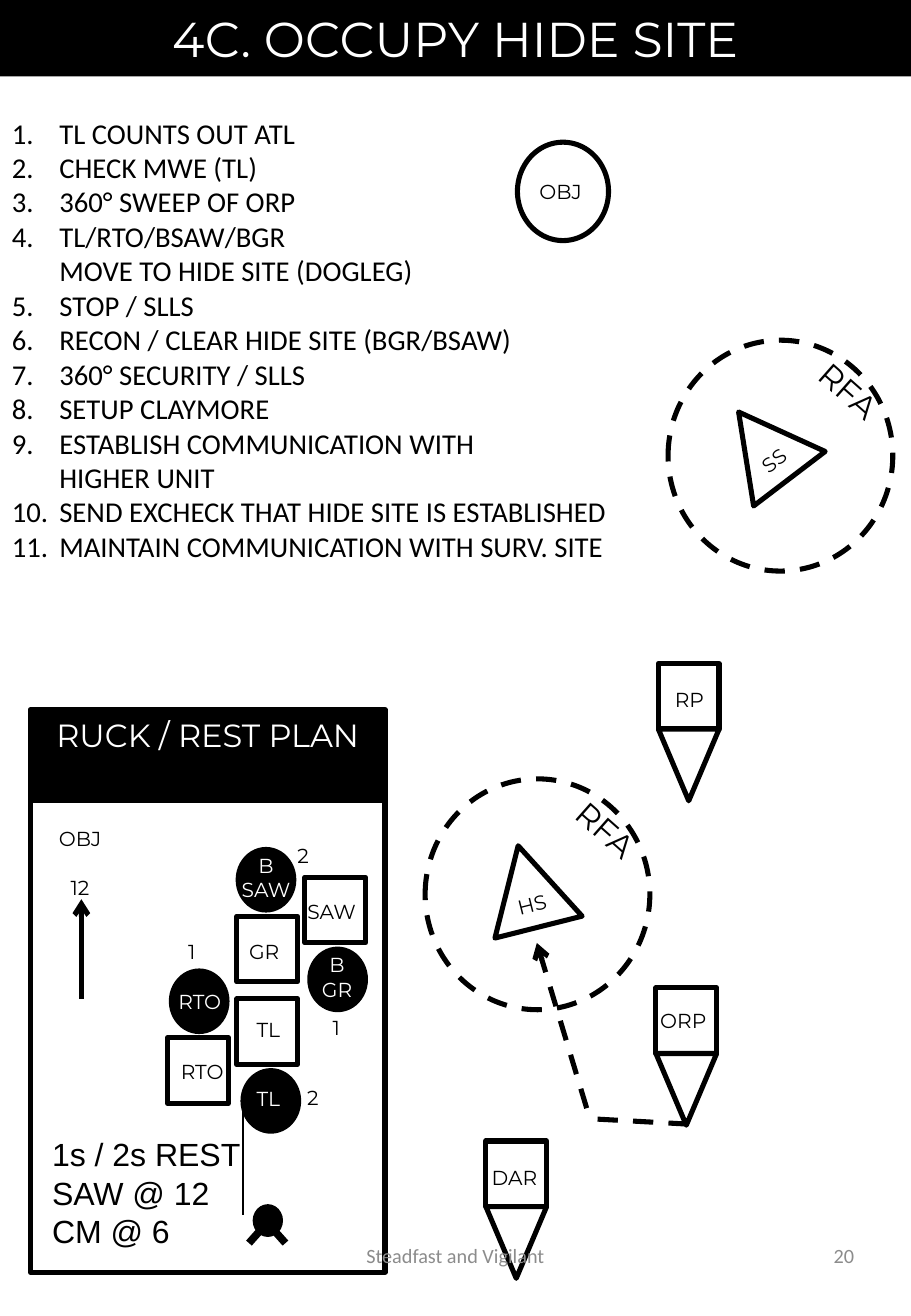
from dataclasses import dataclass

import pptx
import pptx.dml.color
import pptx.enum.dml
import pptx.enum.shapes
import pptx.enum.text
import pptx.oxml.ns
import pptx.util
from lxml import etree

Inches, Pt = pptx.util.Inches, pptx.util.Pt
Shape = pptx.enum.shapes.MSO_SHAPE
Align = pptx.enum.text.PP_ALIGN
Anchor = pptx.enum.text.MSO_ANCHOR
BLACK, WHITE, GREY = "000000", "FFFFFF", "8C8C8C"
MARK_W, MARK_H, TIP_H = 0.5, 0.54, 0.59


@dataclass
class Label:
    text: str
    x: float
    y: float
    w: float
    h: float = 0.3
    rot: float = 0


@dataclass
class Mark:
    """A ruck (square), rest position (disc) or rally point with its label."""
    x: float
    y: float
    label: Label


@dataclass
class Site:
    """A dashed fire area around a triangular site."""
    x: float
    y: float
    tri_x: float
    tri_y: float
    label: Label


RUCKS = [
    Mark(1.95, 7.54, Label("GR", 1.94, 7.68, 0.47)),
    Mark(2.51, 7.22, Label("SAW", 2.42, 7.35, 0.62)),
    Mark(1.38, 8.54, Label("RTO", 1.37, 8.67, 0.59)),
    Mark(1.95, 8.22, Label("TL", 1.99, 8.32, 0.44)),
]
RESTS = [
    Mark(1.94, 6.97, Label("B\nSAW", 1.88, 6.97, 0.62, 0.5)),
    Mark(2.53, 7.79, Label("B\nGR", 2.54, 7.79, 0.47, 0.5)),
    Mark(1.39, 7.97, Label("RTO", 1.35, 8.09, 0.59)),
    Mark(1.98, 8.79, Label("TL", 1.99, 8.89, 0.44)),
]
RALLY_POINTS = [
    Mark(5.42, 5.46, Label("RP", 5.45, 5.61, 0.45)),
    Mark(5.4, 8.13, Label("ORP", 5.33, 8.25, 0.59)),
    Mark(4, 9.39, Label("DAR", 3.94, 9.54, 0.59)),
]
SITES = [
    Site(5.5, 2.8, 5.92, 3.32, Label("SS", 6.15, 3.64, 0.44, rot=322.7)),
    Site(3.5, 6.41, 3.98, 6.95, Label("HS", 4.15, 7.29, 0.46, rot=345.9)),
]
SHIFTS = [("2", 2.35, 6.89), ("1", 1.45, 7.68), ("1", 2.64, 8.31), ("2", 2.43, 8.88)]
STEPS = [
    "TL COUNTS OUT ATL", "CHECK MWE (TL)", "360° SWEEP OF ORP",
    "TL/RTO/BSAW/BGR\vMOVE TO HIDE SITE (DOGLEG)", "STOP / SLLS",
    "RECON / CLEAR HIDE SITE (BGR/BSAW)", "360° SECURITY / SLLS",
    "SETUP CLAYMORE", "ESTABLISH COMMUNICATION WITH\vHIGHER UNIT",
    "SEND EXCHECK THAT HIDE SITE IS ESTABLISHED",
    "MAINTAIN COMMUNICATION WITH SURV. SITE",
]
WIRE_START = (2.22, 9.32)
WIRE_CURVES = [
    ((2.23, 9.36), (2.25, 9.4), (2.24, 9.45)),
    ((2.24, 9.5), (2.19, 9.56), (2.18, 9.62)),
    ((2.18, 9.68), (2.2, 9.77), (2.21, 9.83)),
    ((2.21, 9.88), (2.2, 9.93), (2.2, 9.93)),
]

prs = pptx.Presentation()
prs.slide_width, prs.slide_height = Inches(7.5), Inches(10.83)
s = prs.slides.add_slide(prs.slide_layouts[6])


def rgb(color: str) -> pptx.dml.color.RGBColor:
    return pptx.dml.color.RGBColor.from_string(color)


def set_line(line, width: float, dash: bool = False) -> None:
    line.color.rgb = rgb(BLACK)
    line.width = Pt(width)
    if dash:
        line.dash_style = pptx.enum.dml.MSO_LINE.DASH


def add_mark(kind, x: float, y: float, w: float, h: float, fill: str = "",
             line: float = 0, dash: bool = False, rot: float = 0):
    sp = s.shapes.add_shape(kind, Inches(x), Inches(y), Inches(w), Inches(h))
    sp.shadow.inherit = False
    sp.rotation = rot
    if fill:
        sp.fill.solid()
        sp.fill.fore_color.rgb = rgb(fill)
    else:
        sp.fill.background()
    if line:
        set_line(sp.line, line, dash)
    else:
        sp.line.fill.background()
    return sp


def write(sp, text: str, size: float, color: str = BLACK, font: str = "Montserrat",
          align=Align.CENTER, anchor=Anchor.TOP, wrap: bool = True):
    tf = sp.text_frame
    tf.word_wrap, tf.vertical_anchor = wrap, anchor
    if anchor == Anchor.TOP:
        tf.auto_size = pptx.enum.text.MSO_AUTO_SIZE.SHAPE_TO_FIT_TEXT
    for i, paragraph in enumerate(text.split("\n")):
        p = tf.add_paragraph() if i else tf.paragraphs[0]
        p.alignment = align
        for j, piece in enumerate(paragraph.split("\v")):
            if j:
                p.add_line_break()
            r = p.add_run()
            r.text = piece
            r.font.size, r.font.name = Pt(size), font
            r.font.color.rgb = rgb(color)
    return tf


def add_text(label: Label, size: float = 12, color: str = BLACK, **style):
    sp = s.shapes.add_textbox(Inches(label.x), Inches(label.y), Inches(label.w), Inches(label.h))
    sp.rotation = label.rot
    return write(sp, label.text, size, color, **style)


def add_line(x1: float, y1: float, x2: float, y2: float, width: float = 3,
             dash: bool = False, arrow: bool = False) -> None:
    sp = s.shapes.add_connector(pptx.enum.shapes.MSO_CONNECTOR.STRAIGHT,
                                Inches(x1), Inches(y1), Inches(x2), Inches(y2))
    set_line(sp.line, width, dash)
    if arrow:
        etree.SubElement(sp.line._get_or_add_ln(), pptx.oxml.ns.qn("a:tailEnd"), type="arrow")
    etree.SubElement(sp._element.spPr, pptx.oxml.ns.qn("a:effectLst"))


# Title and numbered steps
write(add_mark(Shape.RECTANGLE, 0, 0, 7.5, 0.63, BLACK), "4C. OCCUPY HIDE SITE", 29, WHITE,
      anchor=Anchor.MIDDLE)
steps = add_text(Label("\n".join(STEPS), 0, 0.9, 6, 3.83), 17, font="Calibri", align=Align.LEFT)
for p in steps.paragraphs:
    pPr = p._p.get_or_add_pPr()
    pPr.set("marL", str(Inches(0.39)))
    pPr.set("indent", str(-Inches(0.39)))
    etree.SubElement(pPr, pptx.oxml.ns.qn("a:buAutoNum"), type="arabicPeriod")

# Objective, fire areas and sites
add_mark(Shape.OVAL, 4.26, 1.17, 0.75, 0.81, line=3)
add_text(Label("OBJ", 4.32, 1.43, 0.59), wrap=False)
for site in SITES:
    add_mark(Shape.OVAL, site.x, site.y, 1.85, 1.9, line=3, dash=True)
    add_text(Label("RFA", site.x + 1.11, site.y + 0.22, 0.78, 0.43, 41.5), 19,
             align=Align.LEFT, wrap=False)
    add_mark(Shape.ISOSCELES_TRIANGLE, site.tri_x, site.tri_y, 0.74, 0.69, line=3,
             rot=site.label.rot)
    add_text(site.label, wrap=False)

# Rally points and the dogleg to the hide site
for point in RALLY_POINTS:
    add_mark(Shape.RECTANGLE, point.x, point.y, MARK_W, MARK_H, WHITE, 3)
    add_mark(Shape.ISOSCELES_TRIANGLE, point.x, point.y + MARK_H, MARK_W, TIP_H, WHITE, 3, rot=180)
    add_text(point.label, wrap=False)
add_line(4.92, 9.21, 5.65, 9.25, dash=True)
add_line(4.83, 9.12, 4.42, 7.76, dash=True, arrow=True)

# Ruck / rest plan panel
add_mark(Shape.RECTANGLE, 0.25, 6.59, 2.92, 3.88, line=3)
write(add_mark(Shape.RECTANGLE, 0.25, 5.84, 2.92, 0.75, BLACK, 3), "RUCK / REST PLAN", 19, WHITE)
for rest in RESTS:
    add_mark(Shape.OVAL, rest.x, rest.y, MARK_W, MARK_H, BLACK)
    add_text(rest.label, color=WHITE, wrap=False)
for ruck in RUCKS:
    add_mark(Shape.RECTANGLE, ruck.x, ruck.y, MARK_W, MARK_H, line=3)
    add_text(ruck.label, wrap=False)
for shift, x, y in SHIFTS:
    add_text(Label(shift, x, y, 0.32, 0.31), align=Align.LEFT, wrap=False)
direction = add_text(Label("OBJ\n12", 0.36, 6.75, 0.6, 0.71), wrap=False)
direction.paragraphs[1].space_before = Pt(14.6)
add_line(0.67, 8.22, 0.67, 7.4, arrow=True)
add_text(Label("1s / 2s REST\nSAW @ 12\nCM @ 6", 0.33, 9.29, 1.78, 1.07), 19, font="Arial",
         align=Align.LEFT, wrap=False)

# Claymore with its wire
add_mark(Shape.OVAL, 2.08, 9.91, 0.25, 0.27, BLACK)
for top_x, foot_x in ((2.13, 2.05), (2.27, 2.35)):
    add_line(top_x, 10.14, foot_x, 10.23, 4.5)
wire, start = [], WIRE_START
for c1, c2, end in WIRE_CURVES:
    for t in (0.25, 0.5, 0.75, 1):
        u = 1 - t
        wire.append(tuple(u**3 * a + 3 * u * u * t * b + 3 * u * t * t * c + t**3 * d
                          for a, b, c, d in zip(start, c1, c2, end)))
    start = end
builder = s.shapes.build_freeform(*WIRE_START, scale=Inches(1))
builder.add_line_segments(wire, close=False)
sp = builder.convert_to_shape()
sp.shadow.inherit = False
sp.fill.background()
set_line(sp.line, 0.75)

# Footer
for label, align in ((Label("Steadfast and Vigilant", 2.56, 10.04, 2.38, 0.58), Align.CENTER),
                     (Label("20", 5.38, 10.04, 1.75, 0.58), Align.RIGHT)):
    add_text(label, 12, GREY, font="Calibri", align=align, anchor=Anchor.MIDDLE)

prs.save("out.pptx")
